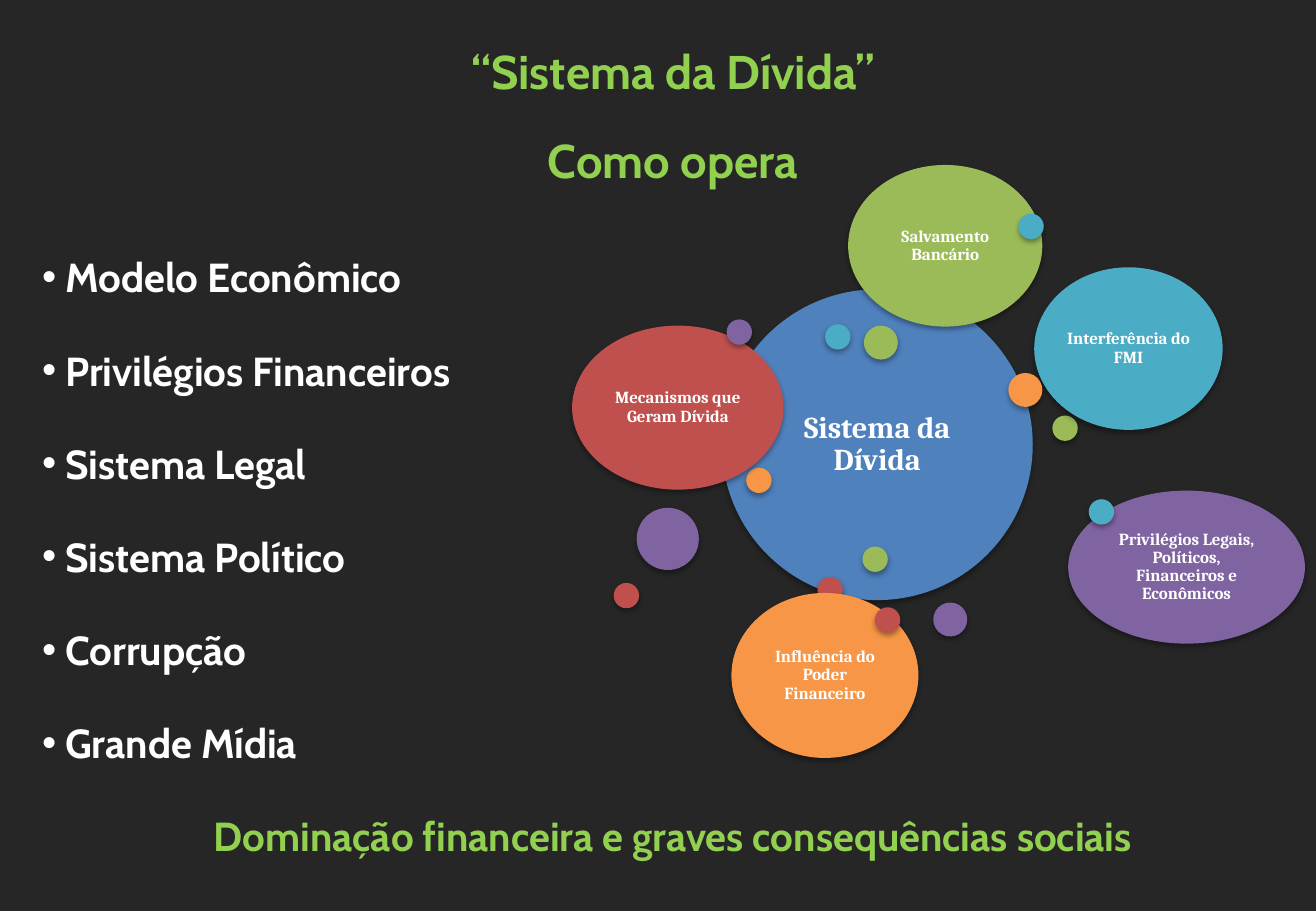
from lxml.etree import SubElement
from pptx import Presentation
from pptx.dml.color import RGBColor
from pptx.enum.shapes import MSO_SHAPE as Shape
from pptx.enum.text import MSO_ANCHOR as Anchor, PP_ALIGN as Align
from pptx.oxml.ns import qn
from pptx.util import Cm, Pt

BLUE, RED, GREEN = "4F81BD", "C0504D", "9BBB59"
PURPLE, TEAL, ORANGE = "8064A2", "4BACC6", "F79646"
WHITE, LIME, CHARCOAL = "FFFFFF", "92D050", "262626"
SMALL, MEDIUM, LARGE = 0.53, 0.71, 1.3

TOPICS = ["Modelo Econômico", "Privilégios Financeiros", "Sistema Legal",
          "Sistema Político", "Corrupção", "Grande Mídia"]

CIRCLES = [
    (15.09, 6.05, 6.5, 6.5, BLUE, "Sistema da Dívida", 18),
    (17.09, 12.07, SMALL, RED),
    (22, 8.69, SMALL, GREEN),
    (19.51, 12.6, MEDIUM, PURPLE),
    (17.25, 6.78, SMALL, TEAL),
    (15.6, 9.78, SMALL, ORANGE),
    (11.96, 6.81, 4.42, 3.43, RED, "Mecanismos que Geram Dívida"),
    (18.06, 6.81, MEDIUM, GREEN),
    (13.31, 10.62, LARGE, PURPLE),
    (21.62, 5.59, 3.94, 3.4, TEAL, "Interferência do FMI"),
    (21.08, 7.8, MEDIUM, ORANGE),
    (12.83, 12.19, SMALL, RED),
    (18.03, 11.43, SMALL, GREEN),
    (22.33, 10.26, 4.95, 3.2, PURPLE,
     "Privilégios Legais, Políticos, Financeiros e Econômicos"),
    (22.76, 10.44, SMALL, TEAL),
    (15.29, 12.4, 3.91, 3.45, ORANGE, "Influência do Poder Financeiro"),
    (18.29, 12.7, SMALL, RED),
    (17.73, 3.45, 4.06, 3.38, GREEN, "Salvamento Bancário"),
    (15.19, 6.68, SMALL, PURPLE),
    (21.29, 4.47, SMALL, TEAL),
]


def color(value):
    return RGBColor.from_string(value)


class DebtSlide:
    """Draws the elements of the debt system slide in one shared style."""

    def __init__(self, presentation):
        self.slide = presentation.slides.add_slide(presentation.slide_layouts[6])
        fill = self.slide.background.fill
        fill.solid()
        fill.fore_color.rgb = color(CHARCOAL)

    def set_font(self, paragraph, name, size, font_color):
        font = paragraph.font
        font.name, font.size, font.bold = name, Pt(size), True
        font.color.rgb = color(font_color)

    def text_box(self, left, top, width, height):
        box = self.slide.shapes.add_textbox(Cm(left), Cm(top), Cm(width), Cm(height))
        box.text_frame.word_wrap = True
        return box.text_frame

    def line(self, frame, text, size, font_color, spacing, before=0, after=0, bullet=False):
        first = frame.paragraphs[0]
        paragraph = frame.add_paragraph() if first.runs else first
        paragraph.text = text
        paragraph.alignment = Align.JUSTIFY if bullet else Align.CENTER
        paragraph.line_spacing = spacing
        paragraph.space_before, paragraph.space_after = Pt(before), Pt(after)
        properties = paragraph._p.get_or_add_pPr()
        properties.set("marL", str(Cm(0.1)))
        properties.set("indent", "0")
        if bullet:
            SubElement(properties, qn("a:buFont"), typeface="Arial")
            SubElement(properties, qn("a:buChar"), char="•")
        self.set_font(paragraph, "Cabin", size, font_color)

    def ellipse(self, left, top, width, height, fill_color):
        shape = self.slide.shapes.add_shape(
            Shape.OVAL, Cm(left), Cm(top), Cm(width), Cm(height))
        shape.fill.solid()
        shape.fill.fore_color.rgb = color(fill_color)
        shape.line.fill.background()
        self.shadow(shape)
        return shape

    def shadow(self, shape):
        shape.shadow.inherit = False
        effects = shape._element.spPr.find(qn("a:effectLst"))
        outer = SubElement(effects, qn("a:outerShdw"), blurRad=str(Pt(3.1)),
                           dist=str(Pt(1.8)), dir="5400000", rotWithShape="0")
        tint = SubElement(outer, qn("a:srgbClr"), val="000000")
        SubElement(tint, qn("a:alpha"), val="35000")

    def dot(self, left, top, diameter, fill_color):
        self.ellipse(left, top, diameter, diameter, fill_color)

    def bubble(self, left, top, width, height, fill_color, text, size=10):
        frame = self.ellipse(left, top, width, height, fill_color).text_frame
        frame.word_wrap = True
        frame.vertical_anchor = Anchor.MIDDLE
        frame.margin_left = frame.margin_right = Cm(0.1)
        frame.margin_top = frame.margin_bottom = Cm(0.1)
        paragraph = frame.paragraphs[0]
        paragraph.text = text
        paragraph.alignment = Align.CENTER
        paragraph.line_spacing = 0.9
        self.set_font(paragraph, "Cambria", size, WHITE)


def main():
    presentation = Presentation()
    presentation.slide_width, presentation.slide_height = Cm(27.51), Cm(19.05)
    debt = DebtSlide(presentation)

    frame = debt.text_box(0.53, 0.53, 26.97, 17.65)
    for title in ("“Sistema da Dívida”", "Como opera"):
        debt.line(frame, title, 28, LIME, 1.2, before=12)
    for index, topic in enumerate(TOPICS):
        debt.line(frame, " " + topic, 24, WHITE, 1.5,
                  before=0 if index else 24, after=12, bullet=True)
    debt.line(frame, "Dominação financeira e graves consequências sociais",
              24, LIME, 1.5, after=12)

    for circle in CIRCLES:
        draw = debt.dot if len(circle) == 4 else debt.bubble
        draw(*circle)
    presentation.save("out.pptx")


if __name__ == "__main__":
    main()
